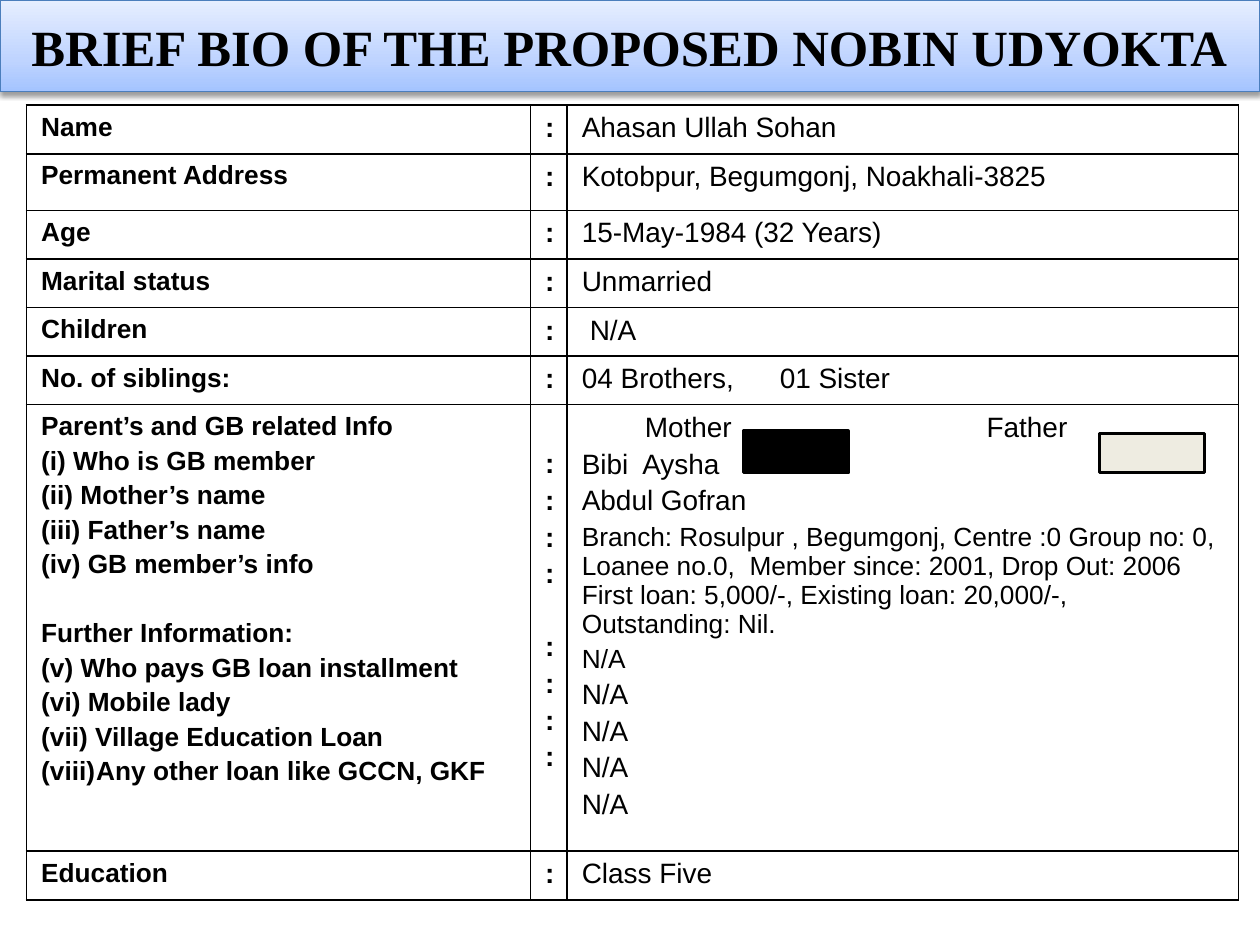
import copy

import pptx
import pptx.dml.color
import pptx.enum.shapes
import pptx.enum.text
import pptx.oxml
import pptx.oxml.ns
import pptx.util
from pptx.util import Cm, Pt

COLORS = {"ink": "000000", "paper": "FFFFFF", "cream": "EEECE1", "title line": "4B7EBC"}
TITLE_GRADIENT = [(0, "A4C4FF"), (0.35, "BFD4FF"), (1, "E6EEFF")]
TITLE = "BRIEF BIO OF THE PROPOSED NOBIN UDYOKTA"

# Paragraphs are plain strings, or (text, options) where one differs
GB_LABELS = [
    "Parent’s and GB related Info",
    "(i) Who is GB member",
    "(ii) Mother’s name",
    "(iii) Father’s name",
    "(iv) GB member’s info",
    ("Further Information:", {"before": 23}),
    "(v) Who pays GB loan installment",
    "(vi) Mobile lady",
    "(vii) Village Education Loan",
    ("Any other loan like GCCN, GKF", {"number": 8}),
]
GB_COLONS = [":"] * 4 + [(":", {"before": 24})] + [":"] * 3
GB_VALUES = [
    ("\tMother\tFather", {"tabs": [1.27, 8.16]}),
    "Bibi  Aysha",
    "Abdul Gofran",
    ("Branch: Rosulpur , Begumgonj, Centre :0 Group no: 0, Loanee no.0,  "
     "Member since: 2001, Drop Out: 2006\vFirst loan: 5,000/-, "
     "Existing loan: 20,000/-, Outstanding: Nil.", {"size": 15}),
    ("N/A", {"size": 15}),
] + ["N/A"] * 4

# Row height in cm, then label, colon and value
ROWS = [
    (0.98, ["Name"], [":"], ["Ahasan Ullah Sohan"]),
    (1.14, ["Permanent Address"], [":"], ["Kotobpur, Begumgonj, Noakhali-3825"]),
    (0.98, ["Age"], [":"], ["15-May-1984 (32 Years)"]),
    (0.98, ["Marital status"], [":"], ["Unmarried"]),
    (0.98, ["Children"], [":"], [("N/A", {"indent": 0.16})]),
    (0.98, ["No. of siblings:"], [":"], [("04 Brothers,\t01 Sister", {"tabs": [3.99]})]),
    (9.0, GB_LABELS, GB_COLONS, GB_VALUES),
    (0.98, ["Education"], [":"], ["Class Five"]),
]
GB_ROW = 6
# Width in cm, text size, bold
COLUMNS = [(10.16, 15, True), (0.74, 16, True), (13.54, 16, False)]
# Left, top, width, height in cm, fill
MARKERS = [(22.17, 8.74, 2.11, 0.79, "cream"), (14.99, 8.69, 2.11, 0.84, "ink")]


def rgb(value):
    return pptx.dml.color.RGBColor.from_string(value)


def add_child(parent, tag, **attributes):
    child = pptx.oxml.xmlchemy.OxmlElement(tag)
    for name, value in attributes.items():
        child.set(name, str(value))
    parent.append(child)
    return child


def format_paragraph(paragraph, item, size, bold, first):
    text, options = item if isinstance(item, tuple) else (item, {})
    paragraph.text = text
    properties = paragraph._p.get_or_add_pPr()
    if not first:
        paragraph.space_before = Pt(options.get("before", 0.2 * size))
    if "indent" in options:
        properties.set("marL", str(Cm(options["indent"])))
    if "number" in options:
        properties.set("marL", str(Cm(1.11)))
        properties.set("indent", str(-Cm(1.11)))
        add_child(properties, "a:buFont", typeface="+mj-lt")
        add_child(properties, "a:buAutoNum", type="romanLcParenBoth",
                  startAt=options["number"])
    if "tabs" in options:
        tab_list = add_child(properties, "a:tabLst")
        for position in options["tabs"]:
            add_child(tab_list, "a:tab", pos=Cm(position), algn="l")
    font = paragraph.font
    font.name, font.size, font.bold = "Arial", Pt(options.get("size", size)), bold
    font.color.rgb = rgb(COLORS["ink"])


def format_cell(cell, items, size, bold):
    cell.margin_left = cell.margin_right = Cm(0.3)
    cell.margin_top = cell.margin_bottom = Cm(0.15)
    frame = cell.text_frame
    for index, item in enumerate(items):
        paragraph = frame.add_paragraph() if index else frame.paragraphs[0]
        format_paragraph(paragraph, item, size, bold, index == 0)
    properties = cell._tc.get_or_add_tcPr()
    for side in ("a:lnL", "a:lnR", "a:lnT", "a:lnB"):
        border = add_child(properties, side, w=Pt(1))
        add_child(add_child(border, "a:solidFill"), "a:srgbClr", val=COLORS["ink"])
    cell.fill.background()


presentation = pptx.Presentation()
presentation.slide_width, presentation.slide_height = Cm(25.4), Cm(19.05)
slide = presentation.slides.add_slide(presentation.slide_layouts[5])

# Title band
title = slide.shapes.title
title.left, title.top, title.width, title.height = Cm(0), Cm(0), Cm(25.4), Cm(1.85)
title.text_frame.text = TITLE
title.text_frame.word_wrap = True
title.text_frame.auto_size = pptx.enum.text.MSO_AUTO_SIZE.NONE
title.text_frame.vertical_anchor = pptx.enum.text.MSO_ANCHOR.MIDDLE
paragraph = title.text_frame.paragraphs[0]
paragraph.alignment = pptx.enum.text.PP_ALIGN.CENTER
paragraph.font.name, paragraph.font.size, paragraph.font.bold = "Times New Roman", Pt(29), True
paragraph.font.color.rgb = rgb(COLORS["ink"])
title.fill.gradient()
title.fill.gradient_angle = 90
stop_list = title._element.spPr.find(".//" + pptx.oxml.ns.qn("a:gsLst"))
stop_list.append(copy.deepcopy(stop_list[-1]))
for stop, (position, color) in zip(title.fill.gradient_stops, TITLE_GRADIENT):
    stop.position, stop.color.rgb = position, rgb(color)
title.line.color.rgb = rgb(COLORS["title line"])
title.line.width = Pt(0.75)
effects = add_child(title._element.spPr, "a:effectLst")
shadow = add_child(effects, "a:outerShdw", blurRad=Pt(3.1), dist=Pt(1.6),
                   dir=5400000, rotWithShape=0)
add_child(add_child(shadow, "a:srgbClr", val=COLORS["ink"]), "a:alpha", val=38000)

# Bio table
table = slide.shapes.add_table(
    len(ROWS), len(COLUMNS), Cm(0.53), Cm(2.12),
    Cm(sum(column[0] for column in COLUMNS)), Cm(sum(row[0] for row in ROWS))).table
table.first_row = table.horz_banding = False
for column, (width, _, _) in zip(table.columns, COLUMNS):
    column.width = Cm(width)
for row, (height, *contents) in zip(table.rows, ROWS):
    row.height = Cm(height)
    for cell, items, (_, size, bold) in zip(row.cells, contents, COLUMNS):
        format_cell(cell, items, size, bold)
# The colons start beside the second line
table.cell(GB_ROW, 1).margin_top = Cm(0.88)
value_cell = table.cell(GB_ROW, 2)
value_cell.fill.solid()
value_cell.fill.fore_color.rgb = rgb(COLORS["paper"])

# Member marker boxes
for left, top, width, height, color in MARKERS:
    marker = slide.shapes.add_shape(pptx.enum.shapes.MSO_SHAPE.RECTANGLE,
                                    Cm(left), Cm(top), Cm(width), Cm(height))
    marker.shadow.inherit = False
    marker.fill.solid()
    marker.fill.fore_color.rgb = rgb(COLORS[color])
    marker.line.color.rgb = rgb(COLORS["ink"])
    marker.line.width = Pt(2)

presentation.save("out.pptx")
